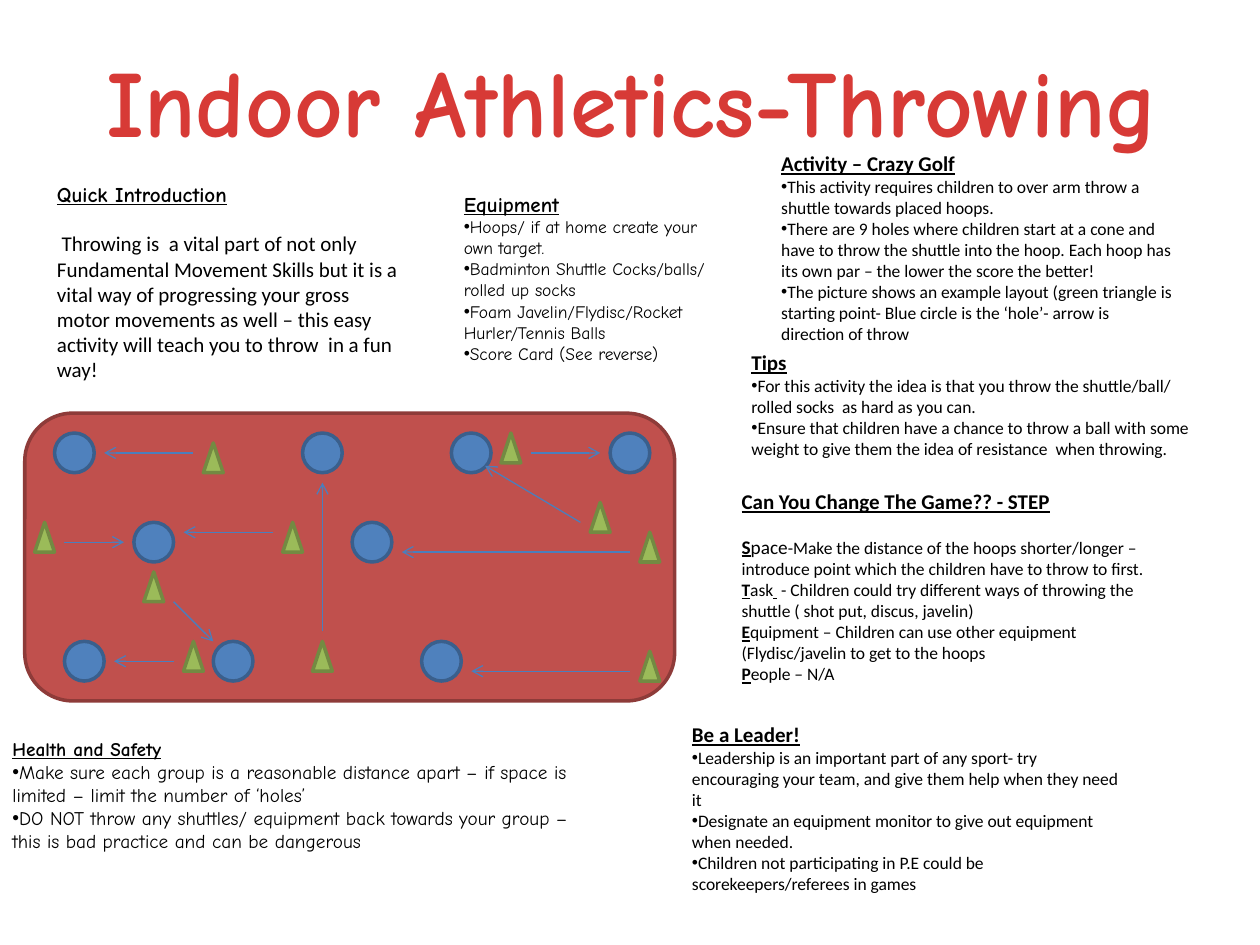
import dataclasses

import lxml.etree
import pptx
import pptx.dml.color
import pptx.enum.shapes
import pptx.enum.text
import pptx.oxml.ns
import pptx.util

Cm, Pt = pptx.util.Cm, pptx.util.Pt
qn = pptx.oxml.ns.qn
Preset = pptx.enum.shapes.MSO_SHAPE


@dataclasses.dataclass(frozen=True)
class Theme:
    hand: str = "Comic Neue"
    plain: str = "Calibri"
    title_size: int = 54
    heading_size: int = 12
    middle_size: int = 11
    body_size: int = 10
    title: str = "D73A36"
    text: str = "000000"
    field: tuple = ("C0504D", "8E3B39")
    hoop: tuple = ("4F81BD", "3A5F8C")
    cone: tuple = ("9BBB59", "738A42")
    throw: str = "4B7EBC"
    outline: float = 2
    throw_width: float = 0.75


THEME = Theme()

# Text boxes: place in cm (left, top, width, height), heading, bulleted points
POINT_BOXES = [
    ((9.1, 3.73, 5.4, 4.2), "Equipment", THEME.hand, THEME.heading_size, THEME.body_size, [
        "Hoops/ if at home create your own target.",
        "Badminton Shuttle Cocks/balls/ rolled up socks",
        "Foam Javelin/Flydisc/Rocket Hurler/Tennis Balls",
        "Score Card (See reverse)"]),
    ((15.5, 2.92, 8.4, 4.62), "Activity – Crazy Golf", THEME.plain, THEME.heading_size, THEME.body_size, [
        "This activity requires children to over arm throw a shuttle towards placed hoops.",
        "There are 9 holes where children start at a cone and have to throw the shuttle into "
        "the hoop. Each hoop has its own par – the lower the score the better!",
        "The picture shows an example layout (green triangle is starting point- Blue circle is "
        "the ‘hole’- arrow is direction of throw"]),
    ((14.9, 6.93, 9.7, 2.9), "Tips", THEME.plain, THEME.heading_size, THEME.body_size, [
        "For this activity the idea is that you throw the shuttle/ball/ rolled socks  as hard "
        "as you can.",
        "Ensure that children have a chance to throw a ball with some weight to give them the "
        "idea of resistance  when throwing."]),
    ((0, 14.73, 12.2, 2.62), "Health and Safety", THEME.hand, THEME.middle_size, THEME.middle_size, [
        "Make sure each group is a reasonable distance apart – if space is limited – limit the "
        "number of ‘holes’",
        "DO NOT throw any shuttles/ equipment back towards your group – this is bad practice "
        "and can be dangerous"]),
    ((13.7, 14.43, 9.2, 4.62), "Be a Leader!", THEME.plain, THEME.heading_size, THEME.body_size, [
        "Leadership is an important part of any sport- try encouraging your team, and give "
        "them help when they need it",
        "Designate an equipment monitor to give out equipment when needed.",
        "Children not participating in P.E could be scorekeepers/referees in games"]),
]
INTRODUCTION = (
    " Throwing is  a vital part of not only Fundamental Movement Skills but it is a vital way "
    "of progressing your gross motor movements as well – this easy activity will teach you to "
    "throw  in a fun way!")
# Each paragraph of STEP is a list of runs: text, emphasised, size
STEP = [
    [("S", True, THEME.middle_size), ("pace", False, THEME.middle_size),
     ("-Make the distance of the hoops shorter/longer –introduce point which the children "
      "have to throw to first.", False, THEME.body_size)],
    [("T", True, THEME.body_size), ("ask", False, THEME.body_size), (" ", True, THEME.body_size),
     (" - Children could try different ways of throwing the shuttle ( shot put, discus, javelin)",
      False, THEME.body_size)],
    [("E", True, THEME.body_size),
     ("quipment – Children can use other equipment (Flydisc/javelin to get to the hoops",
      False, THEME.body_size)],
    [("P", True, THEME.body_size), ("eople – N/A", False, THEME.body_size)],
]

# Playing field in cm; everything on it is measured from its top left corner
FIELD_LEFT, FIELD_TOP, FIELD_WIDTH, FIELD_HEIGHT = 0.5, 8.33, 13.1, 5.8
HOOP_SIZE = (0.8, 0.8)
CONE_SIZE = (0.4, 0.6)
HOOPS = [(0.6, 0.4), (5.6, 0.4), (8.6, 0.4), (11.8, 0.4), (2.2, 2.2), (6.6, 2.2),
         (0.8, 4.6), (3.8, 4.6), (8, 4.6)]
CONES = [(9.6, 0.4), (3.6, 0.6), (11.4, 1.8), (0.2, 2.2), (5.2, 2.2), (12.4, 2.4),
         (2.4, 3.2), (3.2, 4.6), (5.8, 4.6), (12.4, 4.8)]
THROWS = [((10.2, 0.8), (11.6, 0.8)), ((12.2, 5.2), (9, 5.2)), ((12.2, 2.8), (7.6, 2.8)),
          ((11.2, 2.2), (9.28, 1.06)), ((3.4, 0.8), (1.6, 0.8)), ((6, 4.4), (6, 1.4)),
          ((0.8, 2.6), (2, 2.6)), ((5, 2.4), (3.2, 2.4)), ((3, 5), (1.8, 5)),
          ((3, 3.8), (3.8, 4.6))]


def rgb(value):
    return pptx.dml.color.RGBColor.from_string(value)


class SlideBuilder:
    def __init__(self, slide, theme):
        self.slide = slide
        self.theme = theme
        self.diagram = None

    def run(self, paragraph, text, font, size, strong=False, underlined=None, color=None):
        """Strong text is underlined as well unless underlined says otherwise."""
        run = paragraph.add_run()
        run.text = text
        run.font.name = font
        run.font.size = Pt(size)
        run.font.bold = strong
        run.font.underline = strong if underlined is None else underlined
        run.font.color.rgb = rgb(color or self.theme.text)

    def title(self, text, place):
        title = self.slide.shapes.title
        title.left, title.top, title.width, title.height = map(Cm, place)
        frame = title.text_frame
        frame.vertical_anchor = pptx.enum.text.MSO_ANCHOR.TOP
        frame.auto_size = pptx.enum.text.MSO_AUTO_SIZE.SHAPE_TO_FIT_TEXT
        paragraph = frame.paragraphs[0]
        paragraph.alignment = pptx.enum.text.PP_ALIGN.CENTER
        self.run(paragraph, text, self.theme.hand, self.theme.title_size,
                 strong=True, underlined=False, color=self.theme.title)

    def headed_box(self, place, heading, font, size, gap=0):
        """Add a text box with its heading and return the frame for more paragraphs."""
        frame = self.slide.shapes.add_textbox(*map(Cm, place)).text_frame
        frame.word_wrap = True
        frame.auto_size = pptx.enum.text.MSO_AUTO_SIZE.SHAPE_TO_FIT_TEXT
        paragraph = frame.paragraphs[0]
        paragraph.space_after = Pt(gap)
        self.run(paragraph, heading, font, size, strong=True)
        return frame

    def point_box(self, place, heading, font, heading_size, size, points):
        frame = self.headed_box(place, heading, font, heading_size)
        for point in points:
            paragraph = frame.add_paragraph()
            self.run(paragraph, point, font, size)
            properties = paragraph._p.get_or_add_pPr()
            lxml.etree.SubElement(properties, qn("a:buFont"), typeface="Arial")
            lxml.etree.SubElement(properties, qn("a:buChar"), char="•")

    def run_box(self, place, heading, heading_font, gap, paragraphs):
        frame = self.headed_box(place, heading, heading_font, self.theme.heading_size, gap)
        for runs in paragraphs:
            paragraph = frame.add_paragraph()
            for text, strong, size in runs:
                self.run(paragraph, text, self.theme.plain, size, strong)

    def start_diagram(self):
        self.diagram = self.slide.shapes.add_group_shape()

    def on_field(self, point):
        return Cm(FIELD_LEFT + point[0]), Cm(FIELD_TOP + point[1])

    def piece(self, preset, point, size, colors):
        shape = self.diagram.shapes.add_shape(preset, *self.on_field(point), *map(Cm, size))
        shape.shadow.inherit = False
        fill, line = colors
        shape.fill.solid()
        shape.fill.fore_color.rgb = rgb(fill)
        shape.line.color.rgb = rgb(line)
        shape.line.width = Pt(self.theme.outline)

    def throw(self, start, end):
        arrow = self.diagram.shapes.add_connector(
            pptx.enum.shapes.MSO_CONNECTOR.STRAIGHT, *self.on_field(start), *self.on_field(end))
        arrow.line.color.rgb = rgb(self.theme.throw)
        arrow.line.width = Pt(self.theme.throw_width)
        properties = arrow.element.spPr
        lxml.etree.SubElement(properties.find(qn("a:ln")), qn("a:tailEnd"), type="arrow")
        lxml.etree.SubElement(properties, qn("a:effectLst"))


def main():
    deck = pptx.Presentation()
    deck.slide_width, deck.slide_height = Cm(25.4), Cm(19.05)
    builder = SlideBuilder(deck.slides.add_slide(deck.slide_layouts[5]), THEME)

    builder.title("Indoor Athletics-Throwing", (0.08, 0.74, 25.32, 2.57))
    builder.run_box((0.9, 3.53, 7.4, 4.37), "Quick Introduction", THEME.hand, 14,
                    [[(INTRODUCTION, False, THEME.heading_size)]])
    for box in POINT_BOXES:
        builder.point_box(*box)
    builder.run_box((14.7, 9.73, 9, 4.24), "Can You Change The Game?? - STEP",
                    THEME.plain, 12, STEP)

    builder.start_diagram()
    builder.piece(Preset.ROUNDED_RECTANGLE, (0, 0), (FIELD_WIDTH, FIELD_HEIGHT), THEME.field)
    for hoop in HOOPS:
        builder.piece(Preset.OVAL, hoop, HOOP_SIZE, THEME.hoop)
    for cone in CONES:
        builder.piece(Preset.ISOSCELES_TRIANGLE, cone, CONE_SIZE, THEME.cone)
    for start, end in THROWS:
        builder.throw(start, end)

    deck.save("out.pptx")


if __name__ == "__main__":
    main()
